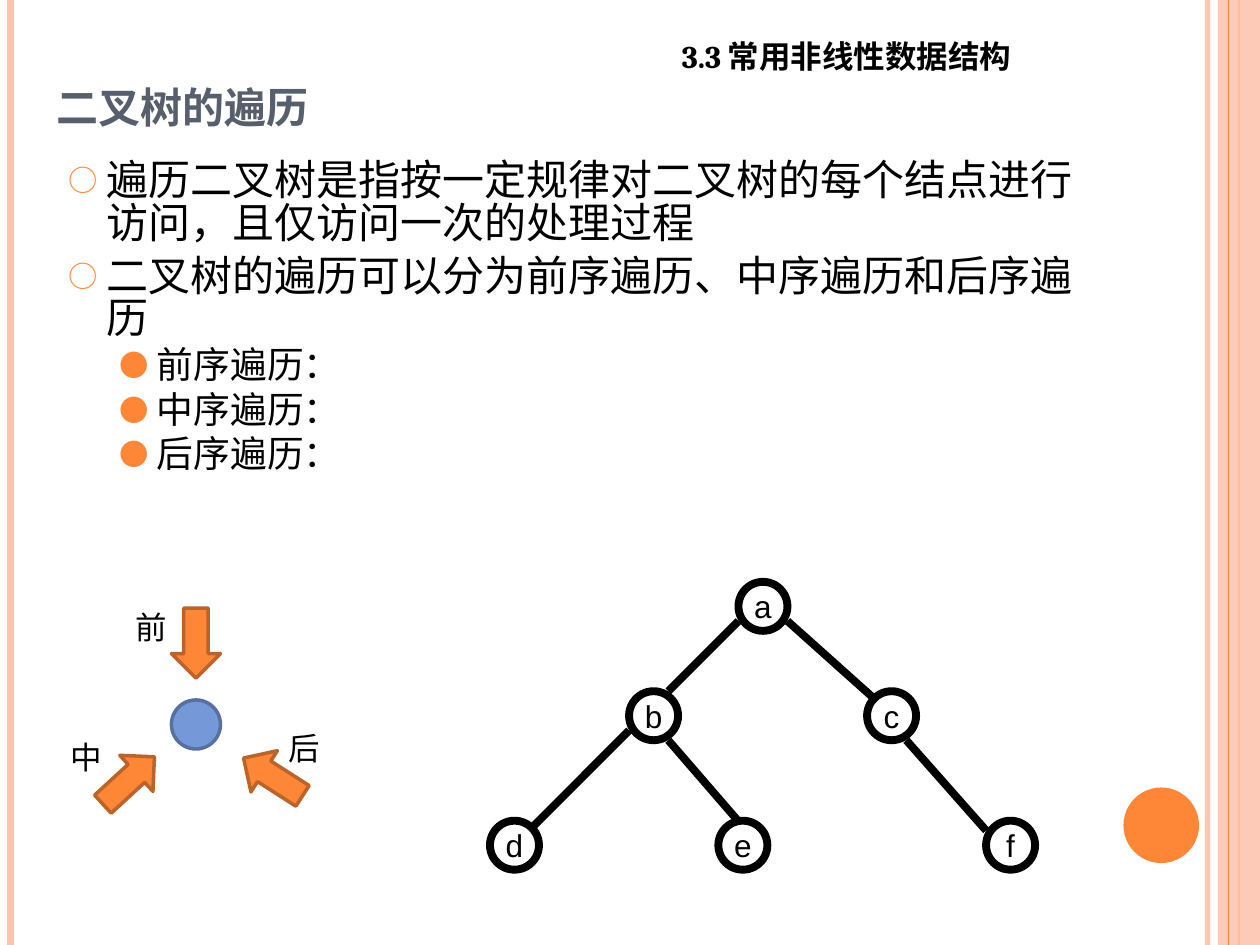
from collections import namedtuple

from lxml.etree import SubElement
from pptx import Presentation
from pptx.dml.color import RGBColor
from pptx.enum.shapes import MSO_CONNECTOR, MSO_SHAPE
from pptx.enum.text import MSO_ANCHOR, MSO_AUTO_SIZE, PP_ALIGN
from pptx.oxml.ns import qn
from pptx.util import Pt

Box = namedtuple("Box", "left top width height")


class Theme:
    orange, orange_edge, peach = "FE8637", "BC6329", "FEC3AE"
    blue, blue_edge = "7598D9", "5770A1"
    slate, black, white = "575F6D", "000000", "FFFFFF"
    cjk, serif, sans = "Noto Sans CJK SC", "Cambria", "Arial"
    title, body, sub_body, label = 30, 24, 21, 18
    line_spacing = 0.84


def rgb(color):
    return RGBColor.from_string(color)


def style_run(run, size, font, color=Theme.black, bold=False):
    run.font.size, run.font.name, run.font.bold = Pt(size), font, bold
    run.font.color.rgb = rgb(color)
    if font != Theme.sans:
        latin = run._r.get_or_add_rPr().find(qn("a:latin"))
        east_asian = latin.makeelement(qn("a:ea"), {"typeface": Theme.cjk})
        latin.addnext(east_asian)


def set_alpha(shape, percent):
    color = shape._element.spPr.find(".//" + qn("a:srgbClr"))
    SubElement(color, qn("a:alpha"), val=str(percent * 1000))


def place(shape, box):
    shape.left, shape.top, shape.width, shape.height = map(Pt, box)


def add_line(page, start, end, color, width):
    line = page.shapes.add_connector(
        MSO_CONNECTOR.STRAIGHT, *map(Pt, (*start, *end)))
    line.line.color.rgb = rgb(color)
    line.line.width = Pt(width)
    SubElement(line._element.spPr, qn("a:effectLst"))
    return line


def add_filled(page, kind, box, fill, edge=None, edge_width=2):
    shape = page.shapes.add_shape(kind, *map(Pt, box))
    shape.shadow.inherit = False
    shape.fill.solid()
    shape.fill.fore_color.rgb = rgb(fill)
    if edge:
        shape.line.color.rgb = rgb(edge)
        shape.line.width = Pt(edge_width)
    else:
        shape.line.fill.background()
    return shape


def add_label(page, box, text, bold=False, wrap=False):
    frame = page.shapes.add_textbox(*map(Pt, box)).text_frame
    frame.word_wrap = wrap
    frame.auto_size = MSO_AUTO_SIZE.SHAPE_TO_FIT_TEXT
    frame.text = text
    para = frame.paragraphs[0]
    para.line_spacing = Theme.line_spacing
    style_run(para.runs[0], Theme.label, Theme.serif, bold=bold)


def add_side_bars(page, box):
    right, bottom = box.left + box.width, box.top + box.height

    def bar(x, color, width):
        return add_line(page, (x, box.top), (x, bottom), color, width)

    set_alpha(bar(right - 30, Theme.peach, 3), 93)
    bar(box.left + 6, Theme.peach, 4.5)
    bar(right - 12, Theme.orange, 1.5)
    band = Box(right - 24, box.top, 24, box.height)
    set_alpha(add_filled(page, MSO_SHAPE.RECTANGLE, band, Theme.peach), 87)
    bar(right - 18, Theme.orange, 0.75)
    add_filled(page, MSO_SHAPE.OVAL, Box(right - 78, bottom - 90, 43.2, 43.2),
               Theme.orange)


def fill_title(title, box, text):
    place(title, box)
    frame = title.text_frame
    frame.text = text
    frame.vertical_anchor = MSO_ANCHOR.BOTTOM
    frame.auto_size = MSO_AUTO_SIZE.NONE
    para = frame.paragraphs[0]
    para.alignment = PP_ALIGN.LEFT
    para.line_spacing = Theme.line_spacing
    run = para.runs[0]
    style_run(run, Theme.title, Theme.cjk, Theme.slate, bold=True)
    run._r.get_or_add_rPr().set("cap", "small")


def set_bullet(para, char, percent, margin, hanging):
    props = para._p.get_or_add_pPr()
    props.set("marL", str(Pt(margin)))
    props.set("indent", str(-Pt(hanging)))
    color = SubElement(props, qn("a:buClr"))
    SubElement(color, qn("a:srgbClr"), val=Theme.orange)
    SubElement(props, qn("a:buSzPct"), val=str(percent * 1000))
    SubElement(props, qn("a:buFont"), typeface=Theme.cjk)
    SubElement(props, qn("a:buChar"), char=char)


def fill_body(body, box, items):
    """items holds (level, text) pairs."""
    place(body, box)
    frame = body.text_frame
    frame.auto_size = MSO_AUTO_SIZE.NONE
    frame.text = "\n".join(text for _, text in items)
    for para, (level, _) in zip(frame.paragraphs, items):
        para.level = level
        para.line_spacing = Theme.line_spacing
        para.space_before = Pt(4.2 if level else 6)
        if level:
            set_bullet(para, "●", 80, 50.4, 21.6)
        else:
            set_bullet(para, "○", 70, 21.6, 21.6)
        style_run(para.runs[0], Theme.sub_body if level else Theme.body, Theme.cjk)


def add_tree(page, box):
    size = 28
    corners = {"a": (142, 0), "b": (79.5, 62.5), "c": (215.5, 62.5),
               "d": (0, 136.5), "e": (130.5, 136.5), "f": (283.5, 136.5)}
    for name, (x, y) in corners.items():
        node = add_filled(page, MSO_SHAPE.OVAL,
                          Box(box.left + x, box.top + y, size, size),
                          Theme.white, Theme.black, 4.5)
        frame = node.text_frame
        frame.text = name
        frame.word_wrap = False
        frame.vertical_anchor = MSO_ANCHOR.MIDDLE
        frame.paragraphs[0].alignment = PP_ALIGN.CENTER
        style_run(frame.paragraphs[0].runs[0], Theme.label, Theme.sans)

    def spot(name, across, down):
        x, y = corners[name]
        return box.left + x + across * size, box.top + y + down * size

    # Each end: node, then fractions of its width and height.
    edges = [(("a", 0, 0.8), ("b", 0.8, 0)), (("b", 0, 0.8), ("d", 0.8, 0.2)),
             (("b", 0.8, 1), ("e", 0.4, 0)), (("c", 0.8, 1), ("f", 0, 0.2)),
             (("a", 1, 0.8), ("c", 0.2, 0.2))]
    for parent, child in edges:
        add_line(page, spot(*parent), spot(*child), Theme.black, 4.5)


def add_visit_orders(page, box):
    add_filled(page, MSO_SHAPE.OVAL, Box(box.left + 65, box.top + 52.5, 28, 28),
               Theme.blue, Theme.blue_edge)
    visits = [("前", (65, 0), 0, (37.5, 0)),
              ("中", (26.5, 78.5), 227.4, (0, 74)),
              ("后", (109, 76.5), 122.7, (124.5, 69))]
    for text, (x, y), angle, (label_x, label_y) in visits:
        arrow = add_filled(page, MSO_SHAPE.DOWN_ARROW,
                           Box(box.left + x, box.top + y, 28, 40),
                           Theme.orange, Theme.orange_edge)
        arrow.rotation = angle
        add_label(page, Box(box.left + label_x, box.top + label_y, 32.4, 29), text)


def main():
    deck = Presentation()
    deck.slide_width, deck.slide_height = Pt(720), Pt(540)
    page = deck.slides.add_slide(deck.slide_layouts[1])
    add_side_bars(page, Box(0, 0, 720, 540))
    fill_title(page.shapes.title, Box(25, -10, 588.5, 90), "二叉树的遍历")
    fill_body(page.placeholders[1], Box(32, 89, 588.5, 384), [
        (0, "遍历二叉树是指按一定规律对二叉树的每个结点进行访问，且仅访问一次的处理过程"),
        (0, "二叉树的遍历可以分为前序遍历、中序遍历和后序遍历"),
        (1, "前序遍历："),
        (1, "中序遍历："),
        (1, "后序遍历："),
    ])
    add_label(page, Box(382.5, 21, 300, 29), "3.3 常用非线性数据结构",
              bold=True, wrap=True)
    add_tree(page, Box(280, 332.5, 311.5, 164.5))
    add_visit_orders(page, Box(33, 347.5, 157, 118.5))
    deck.save("out.pptx")


if __name__ == "__main__":
    main()
